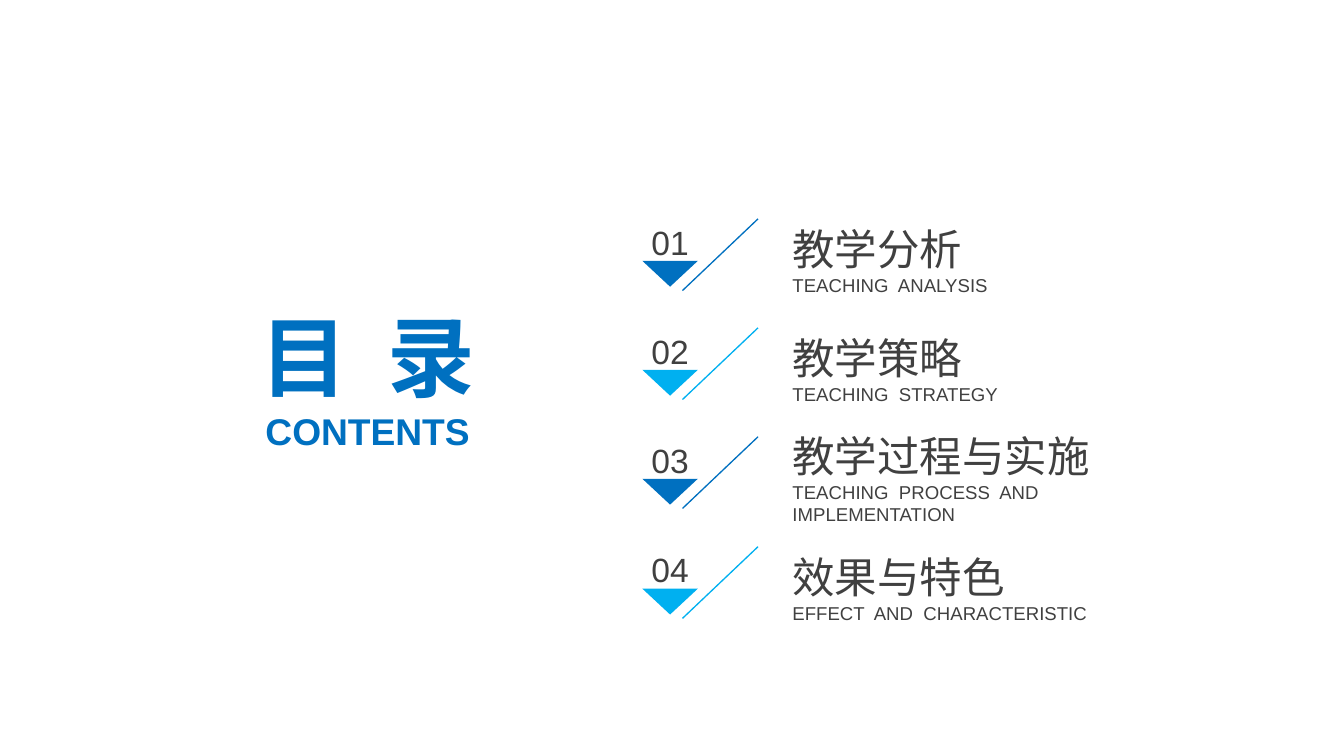
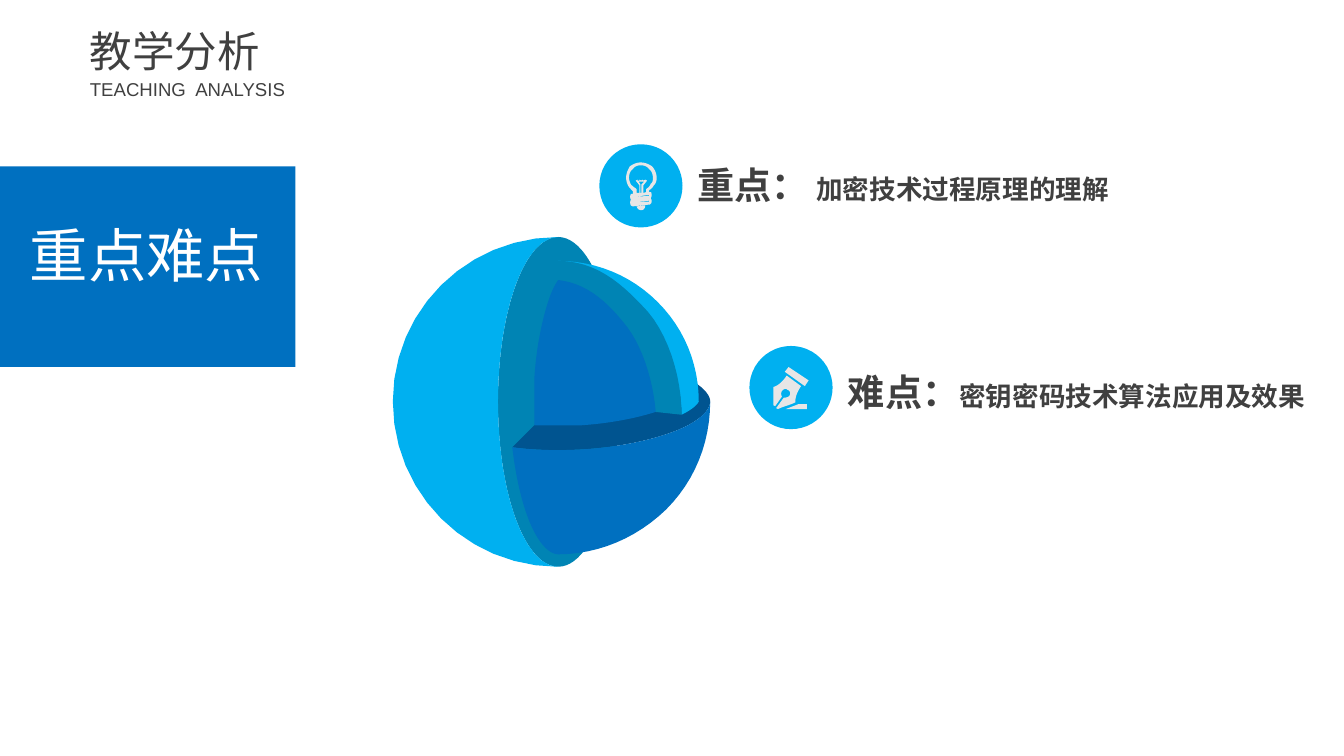
"""Build the contents slide and the teaching analysis slide."""
from lxml.etree import SubElement
from pptx import Presentation
from pptx.dml.color import RGBColor
from pptx.enum.lang import MSO_LANGUAGE_ID as Lang
from pptx.enum.shapes import MSO_CONNECTOR as Link, MSO_SHAPE as Form
from pptx.enum.text import MSO_ANCHOR as Anchor, MSO_AUTO_SIZE as Fit, PP_ALIGN as Align
from pptx.oxml.ns import qn
from pptx.util import Pt

PX = 9144
WIDE, HIGH = 1406, 791
BLUE = RGBColor(0x00, 0x70, 0xC0)
SKY = RGBColor(0x00, 0xB0, 0xF0)
TEAL = RGBColor(0x00, 0x84, 0xB4)
NAVY = RGBColor(0x00, 0x54, 0x90)
DARK = RGBColor(0x40, 0x40, 0x40)
PALE = RGBColor(0xE7, 0xE6, 0xE6)
WHITE = RGBColor(0xFF, 0xFF, 0xFF)
FONT = "Arial"
STEPS = 12

TOPICS = [
    ("教学分析", "TEACHING  ANALYSIS"),
    ("教学策略", "TEACHING  STRATEGY"),
    ("教学过程与实施", "TEACHING  PROCESS  AND  IMPLEMENTATION"),
    ("效果与特色", "EFFECT  AND  CHARACTERISTIC"),
]

SPHERE = [
    (SKY, [(521, 420), (521, 325, 549, 248, 584, 248), (488, 248, 411, 325, 411, 420),
           (411, 516, 488, 593, 584, 593), (549, 593, 521, 516, 521, 420)]),
    (NAVY, [(701, 388), (682, 381, 658, 375, 631, 373), (536, 468),
            (551, 470, 567, 471, 584, 471), (628, 471, 670, 464, 701, 453),
            (732, 442, 743, 429, 743, 420), (743, 412, 732, 399, 701, 388)]),
    (BLUE, [(743, 420), (743, 429, 732, 442, 701, 453), (670, 464, 628, 471, 584, 471),
            (567, 471, 551, 470, 536, 468), (539, 494, 544, 518, 551, 538),
            (562, 569, 575, 580, 584, 580), (626, 580, 666, 563, 697, 533),
            (727, 503, 743, 463, 743, 420)]),
    (SKY, [(671, 321), (695, 352, 713, 395, 713, 434), (725, 428, 730, 423, 731, 420),
           (731, 381, 716, 344, 688, 316), (660, 288, 623, 273, 584, 273),
           (623, 273, 663, 311, 671, 321)]),
    (TEAL, [(584, 273), (584, 420), (713, 434), (713, 395, 699, 346, 671, 319),
            (649, 296, 623, 273, 584, 273)]),
    (BLUE, [(686, 431), (683, 396, 671, 359, 652, 337), (631, 311, 610, 296, 584, 293),
            (581, 297, 578, 303, 575, 311), (567, 334, 561, 364, 559, 396),
            (559, 412, 559, 429, 559, 445), (575, 445, 592, 445, 608, 445),
            (637, 443, 664, 438, 686, 431)]),
]

PEN = [
    [(811, 425), (809, 424), (809, 405), (815, 403, 819, 399, 823, 393), (838, 404),
     (834, 410, 832, 415, 832, 421), (826, 424, 820, 425, 814, 428), (812, 427), (820, 416),
     (822, 416, 824, 416, 826, 414), (827, 412, 827, 409, 824, 408),
     (822, 406, 820, 407, 818, 409), (817, 411, 817, 413, 818, 415)],
    [(822, 428), (844, 428), (844, 423), (835, 423)],
    [(842, 404), (846, 398), (825, 384), (821, 389)],
]

BULB = [
    [(670, 170), (675, 170, 679, 172, 682, 174), (685, 177, 687, 182, 687, 186),
     (687, 189, 686, 192, 684, 194), (683, 196, 681, 198, 679, 199), (679, 201), (681, 201),
     (682, 203, 682, 205, 681, 207), (681, 208), (682, 209, 682, 212, 681, 213), (680, 214),
     (662, 216), (660, 215), (659, 213, 659, 211, 660, 209),
     (659, 207, 659, 205, 660, 203), (662, 203), (662, 200), (660, 198, 658, 196, 657, 194),
     (656, 192, 655, 189, 655, 186), (655, 182, 657, 177, 659, 174),
     (662, 172, 666, 170, 670, 170)],
    [(667, 189), (669, 189), (669, 188), (671, 189), (672, 188), (673, 189), (675, 188),
     (677, 189), (673, 194), (673, 202), (676, 201), (676, 198), (677, 197),
     (679, 196, 680, 194, 681, 192), (683, 191, 683, 188, 683, 186),
     (683, 183, 682, 179, 679, 177), (677, 174, 674, 173, 670, 173),
     (667, 173, 664, 174, 662, 177), (659, 179, 658, 183, 658, 186),
     (658, 188, 659, 191, 660, 193), (661, 194, 663, 196, 665, 197), (666, 198), (666, 202),
     (669, 202), (669, 194), (665, 189), (667, 188)],
    [(674, 190), (668, 190), (670, 193), (670, 202), (671, 202), (671, 193)],
    [(675, 215), (666, 216), (667, 219, 669, 220, 671, 220), (673, 220, 675, 218, 675, 215)],
    [(679, 210), (663, 212), (679, 211)],
    [(679, 204), (663, 206), (679, 205)],
]


def bend(path):
    """Turn a path of line ends and cubic curves into points in EMU."""
    dots = [path[0]]
    for part in path[1:]:
        if len(part) == 2:
            dots.append(part)
            continue
        start = dots[-1]
        for step in range(1, STEPS + 1):
            t = step / STEPS
            s = 1 - t
            dots.append(tuple(
                s**3 * start[k] + 3 * s * s * t * part[k]
                + 3 * s * t * t * part[k + 2] + t**3 * part[k + 4]
                for k in (0, 1)))
    return [(round(x * PX), round(y * PX)) for x, y in dots]


class Deck:
    """Hold the style and the current slide."""

    def __init__(self):
        """Start an empty deck."""
        self.deck = Presentation()
        self.deck.slide_width = WIDE * PX
        self.deck.slide_height = HIGH * PX
        self.page = None

    def add(self):
        """Start a slide."""
        self.page = self.deck.slides.add_slide(self.deck.slide_layouts[5])

    def label(self, shape, lines, align, anchor, space):
        """Fill a shape with paragraphs made of (text, size, colour, bold) runs."""
        frame = shape.text_frame
        frame.word_wrap = True
        frame.auto_size = Fit.NONE
        frame.vertical_anchor = anchor
        frame.margin_left = frame.margin_right = 0
        frame.margin_top = frame.margin_bottom = 0
        for i, runs in enumerate(lines):
            para = frame.add_paragraph() if i else frame.paragraphs[0]
            para.alignment = align
            para.line_spacing = space
            for text, size, hue, bold in runs:
                run = para.add_run()
                run.text = text
                font = run.font
                font.name, font.size, font.bold = FONT, Pt(size), bold
                font.color.rgb = hue
                font.language_id = Lang.SIMPLIFIED_CHINESE

    def title(self, box, run, align=Align.LEFT):
        """Place and fill the title."""
        shape = self.page.shapes.title
        shape.left, shape.top, shape.width, shape.height = [n * PX for n in box]
        self.label(shape, [[run]], align, Anchor.MIDDLE, 1.0)

    def text(self, box, lines, align=Align.LEFT, anchor=Anchor.MIDDLE, space=1.0):
        """Add a text box."""
        shape = self.page.shapes.add_textbox(*[n * PX for n in box])
        self.label(shape, lines, align, anchor, space)

    def paint(self, shape, hue):
        """Give a shape a plain fill."""
        shape.shadow.inherit = False
        shape.fill.solid()
        shape.fill.fore_color.rgb = hue
        shape.line.fill.background()

    def shape(self, form, box, hue):
        """Add a preset shape."""
        self.paint(self.page.shapes.add_shape(form, *[n * PX for n in box]), hue)

    def free(self, paths, hue):
        """Add an outline made of one or more closed paths."""
        first, *rest = [bend(path) for path in paths]
        pen = self.page.shapes.build_freeform(*first[0], scale=1.0)
        pen.add_line_segments(first[1:], close=True)
        for dots in rest:
            pen.move_to(*dots[0])
            pen.add_line_segments(dots[1:], close=True)
        self.paint(pen.convert_to_shape(), hue)

    def line(self, ends, hue):
        """Add a thin straight line."""
        link = self.page.shapes.add_connector(Link.STRAIGHT, *[n * PX for n in ends])
        link.line.color.rgb = hue
        link.line.width = Pt(1)
        SubElement(link._element.spPr, qn("a:effectLst"))

    def topic(self, i, name, note):
        """Add one numbered row of the contents."""
        top = 229 + i * 343 // 3
        hue = (BLUE, SKY)[i % 2]
        self.text((829, top - 8, 335, 101),
                  [[(name, 32, DARK, False)], [(note, 14, DARK, False)]])
        self.line((793, top, 714, top + 75), hue)
        self.shape(Form.FLOWCHART_MERGE, (672, top + 44, 58, 27), hue)
        self.text((670, top + 2, 62, 43), [[(f"{i + 1:02}", 25.3, DARK, False)]],
                  Align.CENTER, Anchor.BOTTOM)

    def point(self, disc, icon, box, runs):
        """Add a round icon with its statement."""
        self.shape(Form.OVAL, (*disc, 87, 87), SKY)
        self.free(icon, PALE)
        self.text(box, [[(text, size, DARK, True) for text, size in runs]],
                  anchor=Anchor.TOP, space=1.2)


def main():
    """Build and save both slides."""
    deck = Deck()

    deck.add()
    deck.title((228, 316, 314, 111), ("目  录", 66, BLUE, True), Align.CENTER)
    deck.text((229, 427, 311, 47), [[("CONTENTS", 28, BLUE, True)]],
              Align.CENTER, Anchor.TOP)
    for i, (name, note) in enumerate(TOPICS):
        deck.topic(i, name, note)

    deck.add()
    name, note = TOPICS[0]
    deck.title((94, 26, 432, 54), (name, 32, DARK, False))
    deck.text((94, 81, 307, 24), [[(note, 14, DARK, False)]])
    deck.shape(Form.RECTANGLE, (0, 174, 309, 210), BLUE)
    deck.text((21, 229, 265, 74), [[("重点难点", 44, WHITE, False)]], Align.CENTER)
    deck.shape(Form.OVAL, (521, 248, 126, 345), TEAL)
    for hue, path in SPHERE:
        deck.free([path], hue)
    deck.point((784, 362), PEN, (887, 377, 501, 52),
               [("难点：", 28), ("密钥密码技术算法应用及效果", 20)])
    deck.point((627, 151), BULB, (730, 160, 454, 52),
               [("重点：", 28), (" ", 24), ("加密技术过程原理的理解", 20)])

    deck.deck.save("out.pptx")


if __name__ == "__main__":
    main()
